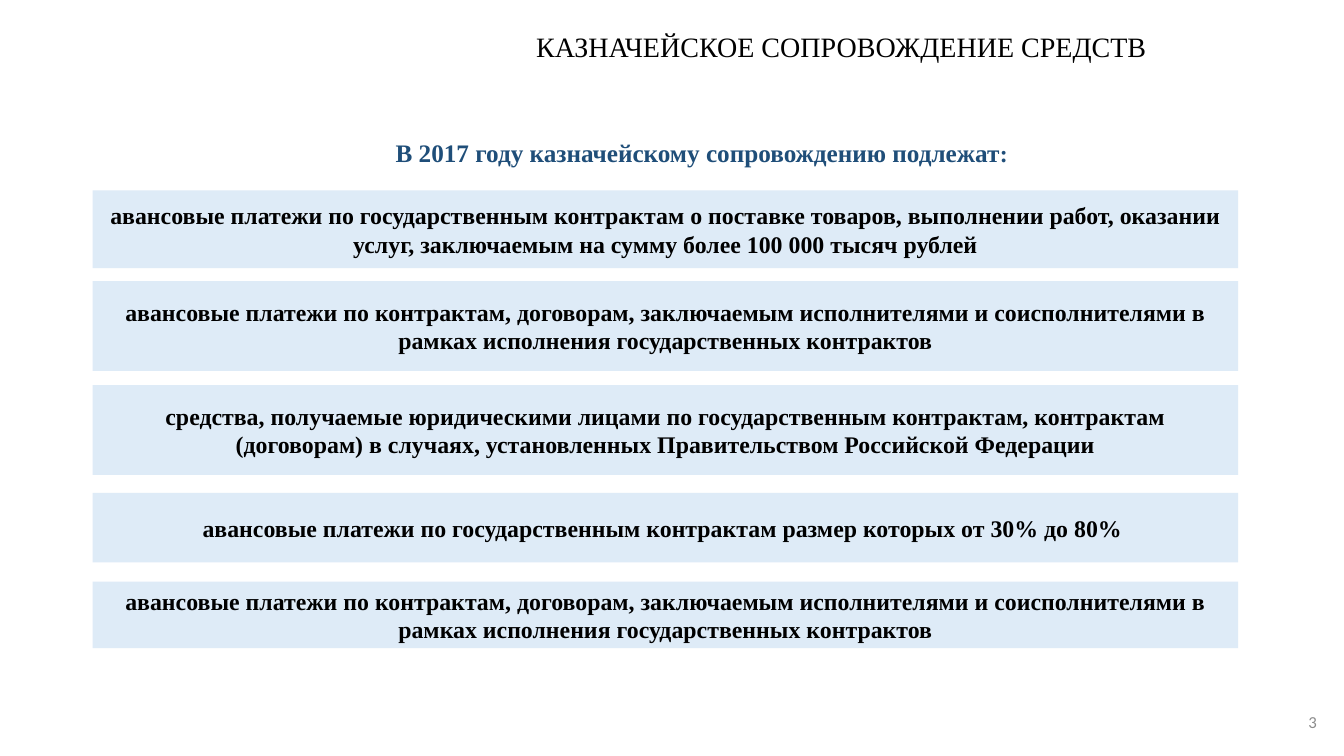
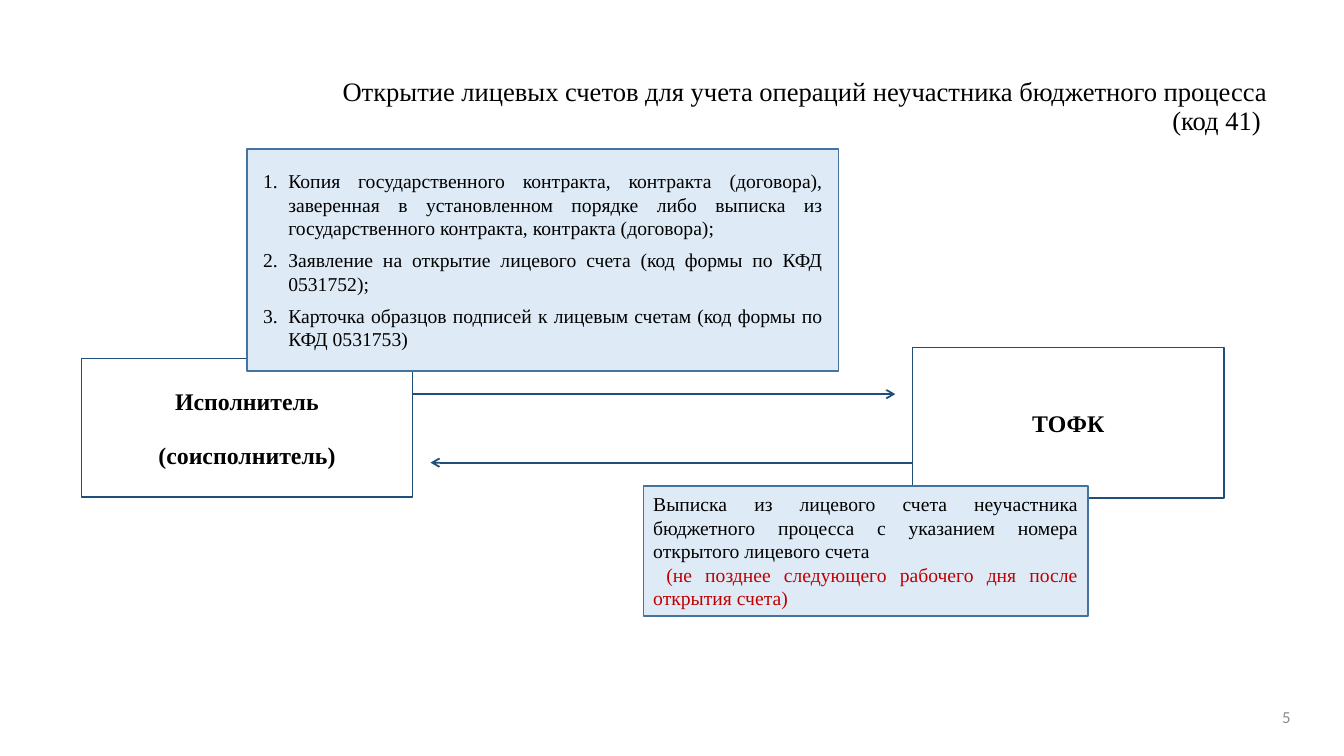
"""Build two slides on treasury support of funds."""
from pptx import Presentation
from pptx.dml.color import RGBColor
from pptx.enum.shapes import MSO_CONNECTOR, MSO_SHAPE
from pptx.enum.text import MSO_ANCHOR, MSO_AUTO_SIZE, PP_ALIGN
from pptx.oxml.ns import qn
from pptx.util import Inches, Pt
from lxml.etree import SubElement

WIDTH, HEIGHT = 13.33, 7.5
NAVY, STEEL, PALE = "1F4E79", "43739E", "DEEBF7"
BLACK, GREY, RED = "000000", "8C8C8C", "C00000"
SERIF, SANS = "Times New Roman", "Calibri"
INSETS = (0.1, 0.05)
WIDE_INSETS = (0.13, 0.07)
LIST_INSETS = (0.16, 0.05)
HANGING = 0.25

FUNDS_TITLE = "КАЗНАЧЕЙСКОЕ СОПРОВОЖДЕНИЕ СРЕДСТВ"
FUNDS_HEADING = [("В 2017 году казначейскому сопровождению подлежат", 18), (":", 17)]
SUBCONTRACTS = (
    "авансовые платежи по контрактам, договорам, заключаемым исполнителями и "
    "соисполнителями в рамках исполнения государственных контрактов"
)
FUNDS = [
    (1.89, 0.77, "авансовые платежи по государственным контрактам о поставке товаров, "
     "выполнении работ, оказании услуг, заключаемым на сумму более 100 000 тысяч рублей"),
    (2.79, 0.89, SUBCONTRACTS),
    (3.82, 0.89, "средства, получаемые юридическими лицами по государственным контрактам, "
     "контрактам (договорам) в случаях, установленных Правительством Российской Федерации"),
    (4.89, 0.69, "авансовые платежи по государственным контрактам размер которых от 30% до 80% "),
    (5.77, 0.66, SUBCONTRACTS),
]

ACCOUNT_TITLE = "Открытие лицевых счетов для учета операций неучастника бюджетного процесса (код 41) "
PARTIES = [
    ((0.81, 3.56, 3.28, 1.37), ["Исполнитель", "(соисполнитель)"]),
    ((9.05, 3.45, 3.09, 1.49), ["ТОФК"]),
]
ARROWS = [(4.09, 8.88, 3.91), (9.05, 4.27, 4.59)]
DOCUMENTS = [
    "Копия государственного контракта, контракта (договора), заверенная в установленном "
    "порядке либо выписка из государственного контракта, контракта (договора);",
    "Заявление на открытие лицевого счета (код формы по КФД 0531752);",
    "Карточка образцов подписей к лицевым счетам (код формы по КФД 0531753)",
]
STATEMENT = (
    "Выписка из лицевого счета неучастника бюджетного процесса с указанием номера "
    "открытого лицевого счета"
)
DEADLINE = "(не позднее следующего рабочего дня после открытия счета)"


def rgb(value):
    """Turn a hex string into a colour."""
    return RGBColor.from_string(value)


def prepare(frame, anchor=MSO_ANCHOR.MIDDLE, insets=INSETS):
    """Set wrapping, anchor and margins of a text frame."""
    frame.word_wrap = True
    frame.auto_size = MSO_AUTO_SIZE.NONE
    frame.vertical_anchor = anchor
    frame.margin_left = frame.margin_right = Inches(insets[0])
    frame.margin_top = frame.margin_bottom = Inches(insets[1])


def write(frame, text, size=17, color=BLACK, font=SERIF, bold=False,
          align=PP_ALIGN.CENTER, before=0, spacing=1.0, indent=0, numbered=False):
    """Add a paragraph from a string or from (text, size) pairs."""
    first = not frame.paragraphs[0].runs
    para = frame.paragraphs[0] if first else frame.add_paragraph()
    para.alignment = align
    para.line_spacing = spacing
    para.space_before = Pt(0 if first else before)
    properties = para._p.get_or_add_pPr()
    if numbered:
        properties.set("marL", str(Inches(HANGING)))
        properties.set("indent", str(-Inches(HANGING)))
        SubElement(properties, qn("a:buFont"), typeface=font)
        SubElement(properties, qn("a:buAutoNum"), type="arabicPeriod")
    elif indent:
        properties.set("indent", str(Inches(indent)))
    spans = [(text, size)] if isinstance(text, str) else text
    for words, points in spans:
        span = para.add_run()
        span.text = words
        span.font.name = font
        span.font.size = Pt(points)
        span.font.bold = bold
        span.font.color.rgb = rgb(color)


def add_label(page, place, text, anchor=MSO_ANCHOR.MIDDLE, **style):
    """Add a text box holding one paragraph."""
    box = page.shapes.add_textbox(*map(Inches, place))
    prepare(box.text_frame, anchor)
    write(box.text_frame, text, **style)


def add_box(page, place, fill=None, line=None, insets=INSETS):
    """Add a rectangle and return its text frame."""
    box = page.shapes.add_shape(MSO_SHAPE.RECTANGLE, *map(Inches, place))
    box.shadow.inherit = False
    if fill:
        box.fill.solid()
        box.fill.fore_color.rgb = rgb(fill)
    else:
        box.fill.background()
    if line:
        box.line.color.rgb = rgb(line)
        box.line.width = Pt(1)
    else:
        box.line.fill.background()
    prepare(box.text_frame, insets=insets)
    return box.text_frame


def add_arrow(page, start, end, top):
    """Add a horizontal arrow."""
    arrow = page.shapes.add_connector(
        MSO_CONNECTOR.STRAIGHT, *map(Inches, (start, top, end, top)))
    arrow.line.color.rgb = rgb(NAVY)
    arrow.line.width = Pt(1.25)
    SubElement(arrow.line._get_or_add_ln(), qn("a:tailEnd"), type="arrow")
    SubElement(arrow._element.spPr, qn("a:effectLst"))


def add_page(deck, title, place, number, number_place, **style):
    """Add a slide with its title and page number."""
    page = deck.slides.add_slide(deck.slide_layouts[5])
    heading = page.shapes.title
    heading.left, heading.top, heading.width, heading.height = map(Inches, place)
    prepare(heading.text_frame, MSO_ANCHOR.TOP)
    write(heading.text_frame, title, **style)
    add_label(page, number_place, number, size=12, color=GREY, font=SANS,
              align=PP_ALIGN.RIGHT)
    return page


def build_funds(deck):
    """Build the list of supported funds."""
    page = add_page(deck, FUNDS_TITLE, (4.55, 0.24, 7.59, 0.42),
                    "3", (10.2, 6.97, 2.96, 0.39), size=20)
    add_label(page, (1.52, 1.32, 10.88, 0.38), FUNDS_HEADING, color=NAVY, bold=True)
    margin = 0.92
    for top, height, text in FUNDS:
        frame = add_box(page, (margin, top, 11.36, height), fill=PALE, insets=WIDE_INSETS)
        write(frame, text, bold=True)


def build_account(deck):
    """Build the exchange that opens an account."""
    page = add_page(deck, ACCOUNT_TITLE, (3.2, 0.73, 9.47, 0.68),
                    "5", (12.43, 6.91, 0.47, 0.4),
                    size=19, align=PP_ALIGN.RIGHT, spacing=0.9)
    for place, names in PARTIES:
        frame = add_box(page, place, line=NAVY)
        for name in names:
            write(frame, name, bold=True, before=18)
    for arrow in ARROWS:
        add_arrow(page, *arrow)
    note = {"size": 14, "align": PP_ALIGN.JUSTIFY}
    reply = add_box(page, (6.38, 4.82, 4.41, 1.29), fill=PALE, line=STEEL)
    write(reply, STATEMENT, **note)
    write(reply, DEADLINE, color=RED, indent=0.13, **note)
    request = add_box(page, (2.45, 1.48, 5.87, 2.2), fill=PALE, line=STEEL,
                      insets=LIST_INSETS)
    for document in DOCUMENTS:
        write(request, document, before=6, numbered=True, **note)


def main():
    """Build and save the deck."""
    deck = Presentation()
    deck.slide_width, deck.slide_height = Inches(WIDTH), Inches(HEIGHT)
    build_funds(deck)
    build_account(deck)
    deck.save("out.pptx")


if __name__ == "__main__":
    main()
